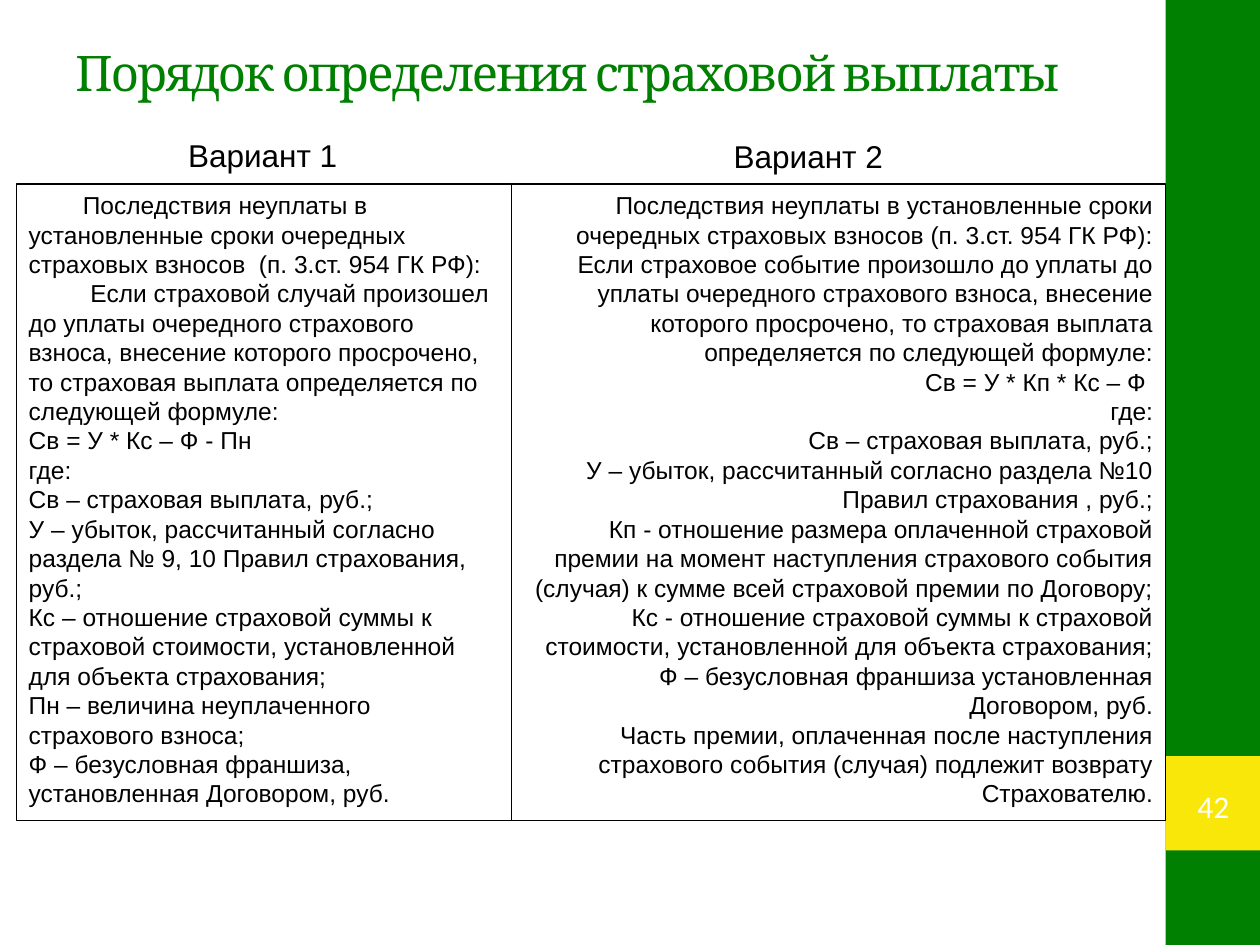
import pptx
import pptx.util
import pptx.dml.color
import pptx.enum.shapes
import pptx.enum.text
from dataclasses import dataclass

Inches = pptx.util.Inches
Align = pptx.enum.text.PP_ALIGN
Anchor = pptx.enum.text.MSO_ANCHOR


@dataclass(frozen=True)
class Theme:
    green: str = "008000"
    yellow: str = "F8E708"
    black: str = "000000"
    white: str = "FFFFFF"
    title_size: int = 28
    heading_size: int = 18
    body_size: int = 14


theme = Theme()


def rgb(code):
    return pptx.dml.color.RGBColor.from_string(code)


def write(shape, lines, size, font="Arial", color=theme.black, align=Align.LEFT,
          anchor=Anchor.TOP, spacing=0, indents=(), margin=None):
    frame = shape.text_frame
    frame.word_wrap = True
    frame.vertical_anchor = anchor
    if margin is not None:
        frame.margin_left = frame.margin_right = margin
        frame.margin_top = frame.margin_bottom = margin
    for index, line in enumerate(lines):
        paragraph = frame.add_paragraph() if index else frame.paragraphs[0]
        paragraph.alignment = align
        if index < len(indents):
            paragraph._p.get_or_add_pPr().set("indent", str(Inches(indents[index])))
        run = paragraph.add_run()
        run.text = line
        run.font.size = pptx.util.Pt(size)
        run.font.name = font
        run.font.color.rgb = rgb(color)
        if spacing:
            run._r.get_or_add_rPr().set("spc", str(spacing * 100))


deck = pptx.Presentation()
deck.slide_width = Inches(10)
deck.slide_height = Inches(7.5)
slide = deck.slides.add_slide(deck.slide_layouts[6])
shapes = slide.shapes
rectangle = pptx.enum.shapes.MSO_SHAPE.RECTANGLE

for top, height, color in [(0, 7.5, theme.green), (6, 0.75, theme.yellow)]:
    band = shapes.add_shape(rectangle, Inches(9.25), Inches(top), Inches(0.75), Inches(height))
    band.shadow.inherit = False
    band.fill.solid()
    band.fill.fore_color.rgb = rgb(color)
    band.line.fill.background()

title = shapes.add_textbox(Inches(0.5), Inches(0.3), Inches(8.33), Inches(0.54))
write(title, ["Порядок определения страховой выплаты"], theme.title_size,
      font="Cambria", color=theme.green, anchor=Anchor.MIDDLE, spacing=-1)

page_number = shapes.add_textbox(Inches(9.33), Inches(6.18), Inches(0.6), Inches(0.43))
write(page_number, ["42"], theme.heading_size, font="Calibri", color=theme.white,
      align=Align.CENTER, anchor=Anchor.MIDDLE, margin=0)

first_variant = [
    "Последствия неуплаты в установленные сроки очередных страховых взносов  (п. 3.ст. 954 ГК РФ):",
    "Если страховой случай произошел до уплаты очередного страхового взноса, внесение которого "
    "просрочено, то страховая выплата определяется по следующей формуле:",
    "Св = У * Кс – Ф - Пн",
    "где:",
    "Св – страховая выплата, руб.;",
    "У – убыток, рассчитанный согласно раздела № 9, 10 Правил страхования, руб.;",
    "Кс – отношение страховой суммы к страховой стоимости, установленной для объекта страхования;",
    "Пн – величина неуплаченного страхового взноса;",
    "Ф – безусловная франшиза, установленная Договором, руб.",
]
second_variant = [
    "Последствия неуплаты в установленные сроки очередных страховых взносов (п. 3.ст. 954 ГК РФ): "
    "Если страховое событие произошло до уплаты до уплаты очередного страхового взноса, внесение "
    "которого просрочено, то страховая выплата определяется по следующей формуле:",
    "Св = У * Кп * Кс – Ф ",
    "где:",
    "Св – страховая выплата, руб.;",
    "У – убыток, рассчитанный согласно раздела №10 Правил страхования , руб.;",
    "Кп - отношение размера оплаченной страховой премии на момент наступления страхового события "
    "(случая) к сумме всей страховой премии по Договору;",
    "Кс - отношение страховой суммы к страховой стоимости, установленной для объекта страхования;",
    "Ф – безусловная франшиза установленная Договором, руб.",
    "Часть премии, оплаченная после наступления страхового события (случая) подлежит возврату "
    "Страхователю.",
]

variants = [
    ("Вариант 1", (1.22, 1.03, 1.73), first_variant, (0.13, 3.93), Align.LEFT, (0.43, 0.49)),
    ("Вариант 2", (5.39, 1.04, 2.05), second_variant, (4.06, 5.19), Align.RIGHT, ()),
]
for name, (name_left, name_top, name_width), terms, (left, width), align, indents in variants:
    terms_box = shapes.add_shape(rectangle, Inches(left), Inches(1.46), Inches(width), Inches(5.05))
    terms_box.shadow.inherit = False
    terms_box.fill.background()
    terms_box.line.color.rgb = rgb(theme.black)
    terms_box.line.width = pptx.util.Pt(0.75)
    write(terms_box, terms, theme.body_size, align=align, indents=indents)

    heading = shapes.add_textbox(Inches(name_left), Inches(name_top), Inches(name_width), Inches(0.4))
    write(heading, [name], theme.heading_size, align=Align.CENTER)

deck.save("out.pptx")
